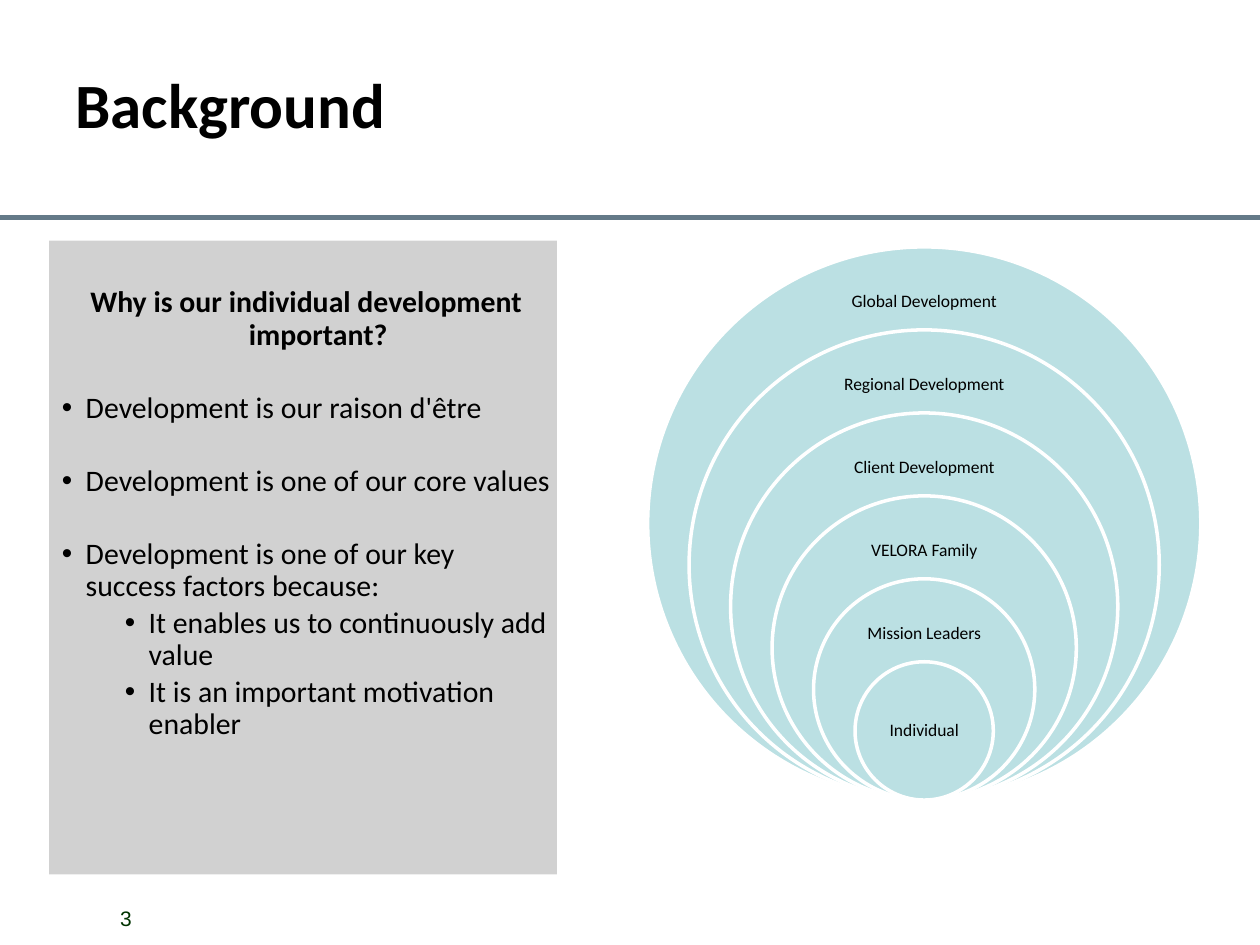
from dataclasses import dataclass

from lxml import etree
from pptx import Presentation
from pptx.dml.color import RGBColor
from pptx.enum.shapes import MSO_CONNECTOR, MSO_SHAPE
from pptx.enum.text import MSO_ANCHOR, MSO_AUTO_SIZE, PP_ALIGN
from pptx.oxml.ns import qn
from pptx.util import Inches, Pt

LEFT, MID = PP_ALIGN.LEFT, PP_ALIGN.CENTER
TOP, CORE = MSO_ANCHOR.TOP, MSO_ANCHOR.MIDDLE
FIXED = MSO_AUTO_SIZE.NONE
RECT, OVAL = MSO_SHAPE.RECTANGLE, MSO_SHAPE.OVAL
LINE = MSO_CONNECTOR.STRAIGHT


@dataclass(frozen=True)
class Theme:
    """Colours, fonts and type sizes."""
    ink: str = "000000"
    rule: str = "647A88"
    panel: str = "CCCCCC"
    ring: str = "BBE0E3"
    edge: str = "FFFFFF"
    page: str = "003300"
    face: str = "Calibri"
    plain: str = "Arial"
    head: int = 36
    body: int = 17
    label: int = 10
    foot: int = 12


THEME = Theme()
WIDE, HIGH = 10, 7.5
GAP, TIGHT = 23.4, 2.7
POINTS = [
    ("Why is our individual development important?", 0, GAP),
    ("Development is our raison d'être", 1, GAP),
    ("Development is one of our core values", 1, GAP),
    ("Development is one of our key success factors because:", 1, TIGHT),
    ("It enables us to continuously add value", 2, TIGHT),
    ("It is an important motivation enabler", 2, TIGHT),
]
RINGS = [
    ("Global Development", 1.65),
    ("Regional Development", 1.61),
    ("Client Development", 1.59),
    ("VELORA Family", 1.3),
    ("Mission Leaders", 1.14),
    ("Individual", 0.78),
]


def apply(item, form):
    """Set each attribute in a dict of format values."""
    for key, value in form.items():
        setattr(item, key, value)


def place(item, box):
    """Move and size an item to a box in inches."""
    names = ("left", "top", "width", "height")
    apply(item, dict(zip(names, map(Inches, box))))


def style(part, size, tint=THEME.ink, face=THEME.face, bold=False):
    """Give a paragraph its font."""
    apply(part.font, {"size": Pt(size), "name": face, "bold": bold})
    part.font.color.rgb = RGBColor.from_string(tint)


def frame(item, pads, anchor):
    """Set the insets, wrap and anchor of a text frame."""
    names = ("margin_left", "margin_top", "margin_right", "margin_bottom")
    form = dict(zip(names, map(Inches, pads)))
    form.update(word_wrap=True, auto_size=FIXED, vertical_anchor=anchor)
    apply(item.text_frame, form)


def shape(slide, kind, box, fill, edge=None):
    """Draw a flat filled shape."""
    item = slide.shapes.add_shape(kind, *map(Inches, box))
    item.shadow.inherit = False
    item.fill.solid()
    item.fill.fore_color.rgb = RGBColor.from_string(fill)
    if edge:
        item.line.color.rgb = RGBColor.from_string(edge)
        item.line.width = Pt(2)
    else:
        item.line.fill.background()
    return item


def label(slide, box, text, size, **font):
    """Write one centred line in a text box."""
    item = slide.shapes.add_textbox(*map(Inches, box))
    frame(item, (0.08,) * 4, CORE)
    part = item.text_frame.paragraphs[0]
    part.text = text
    apply(part, {"alignment": MID, "line_spacing": 0.9})
    style(part, size, **font)


def header(slide, box):
    """Place the title and the rule below it."""
    left, top, width, height = box
    title = slide.shapes.title
    place(title, (left + width * 0.05, top + 0.09, width * 0.9, 1.46))
    frame(title, (0.1, 0.05, 0.1, 0.05), CORE)
    title.text_frame.text = "Background"
    part = title.text_frame.paragraphs[0]
    part.alignment = LEFT
    style(part, THEME.head, bold=True)
    low = top + height
    rule = slide.shapes.add_connector(
        LINE, *map(Inches, (left, low, left + width, low)))
    rule.line.color.rgb = RGBColor.from_string(THEME.rule)
    rule.line.width = Pt(3)
    etree.SubElement(rule._element.spPr, qn("a:effectLst"))


def point(part, text, level, after):
    """Write one heading or bullet of the list."""
    part.text = text
    apply(part, {
        "level": max(level - 1, 0), "alignment": LEFT if level else MID,
        "line_spacing": 0.9, "space_before": Pt(0), "space_after": Pt(after),
    })
    props = part._p.get_or_add_pPr()
    props.set("marL", str(Inches(0.69 if level == 2 else 0.19)))
    props.set("indent", str(Inches(-0.19)))
    if level:
        etree.SubElement(props, qn("a:buChar")).set("char", "•")
    else:
        etree.SubElement(props, qn("a:buNone"))
    style(part, THEME.body, bold=not level)


def reasons(slide, box):
    """Place the grey panel and its list."""
    left, top, width, height = box
    panel = shape(slide, RECT, box, THEME.panel)
    tint = panel._element.spPr.find(".//" + qn("a:srgbClr"))
    etree.SubElement(tint, qn("a:alpha")).set("val", "90000")
    body = slide.placeholders[1]
    body._element.addprevious(panel._element)
    place(body, (left, top + 0.27, width * 1.02, height))
    frame(body, (0.1, 0.1, 0.13, 0.15), TOP)
    text = body.text_frame
    for row, data in enumerate(POINTS):
        part = text.add_paragraph() if row else text.paragraphs[0]
        point(part, *data)


def nest(slide, box):
    """Stack rings that share their lowest point."""
    left, top, width, height = box
    axis, base = left + width / 2, top + height
    deep = height * 0.1
    for row, (text, span) in enumerate(RINGS):
        size = height * (1 - 0.15 * row)
        shape(slide, OVAL, (axis - size / 2, base - size, size, size),
              THEME.ring, THEME.edge)
        last = row == len(RINGS) - 1
        mid = base - size / 2 if last else base - size + deep
        label(slide, (axis - span / 2, mid - deep / 2, span, deep),
              text, THEME.label)


def main():
    """Build and save the slide."""
    deck = Presentation()
    apply(deck, {"slide_width": Inches(WIDE), "slide_height": Inches(HIGH)})
    slide = deck.slides.add_slide(deck.slide_layouts[1])
    header(slide, (0, 0, WIDE, HIGH * 0.23))
    reasons(slide, (0.39, 1.91, 4.03, 5.03))
    nest(slide, (5.14, 1.96, 4.39, 4.39))
    label(slide, (WIDE * 0.05, 7.15, WIDE * 0.1, HIGH * 0.04), "3",
          THEME.foot, tint=THEME.page, face=THEME.plain)
    deck.save("out.pptx")


if __name__ == "__main__":
    main()
